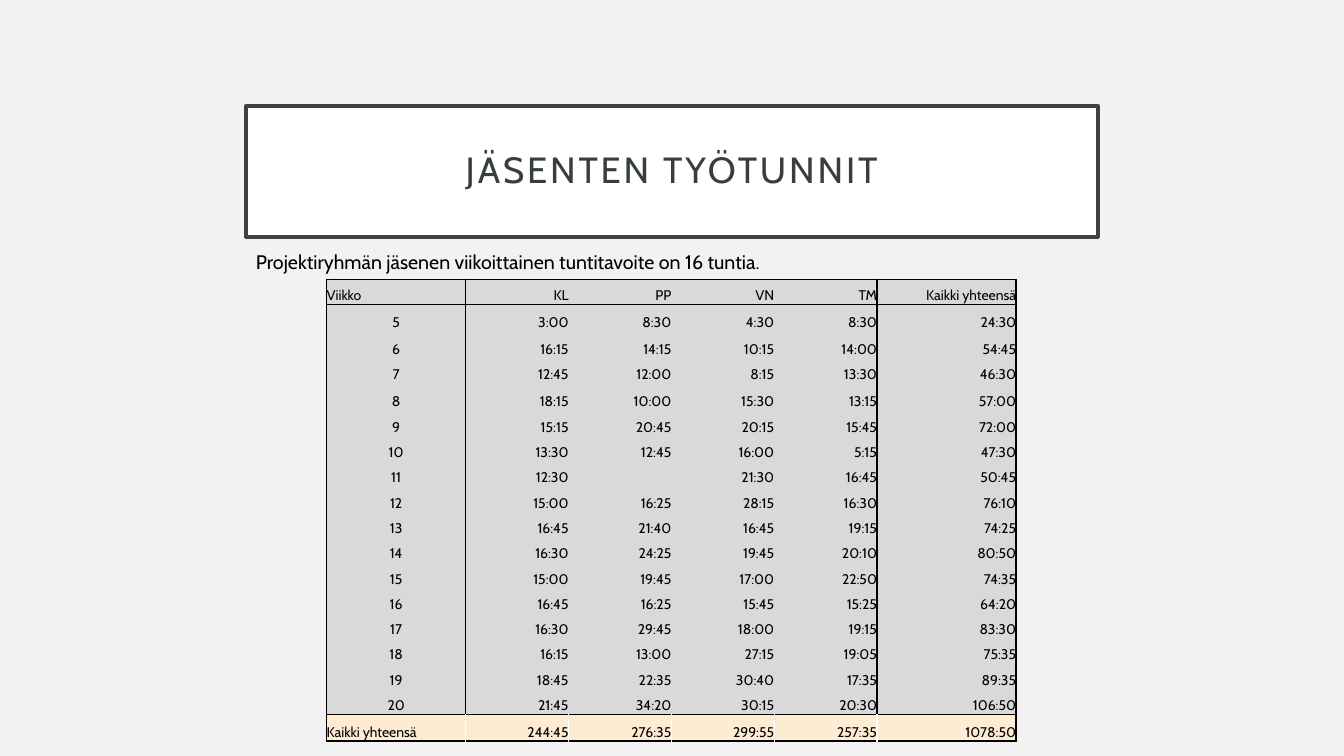
from pptx import Presentation
from pptx.dml.color import RGBColor
from pptx.enum.text import MSO_ANCHOR, MSO_AUTO_SIZE, PP_ALIGN
from pptx.oxml.xmlchemy import OxmlElement
from pptx.util import Inches, Pt

SLIDE_WIDTH, SLIDE_HEIGHT = Inches(13.33), Inches(7.5)
FONT = "Cabin"
BLACK, WHITE, GREY, CREAM = "000000", "FFFFFF", "D9D9D9", "FDECD2"

# Column widths and row heights in hundredths of the slide
COLUMN_WIDTHS = [10.35] + [7.65] * 4 + [10.35]
ROW_HEIGHT, TALL_ROW_HEIGHT = 3.35, 3.55
TALL_ROWS = {1, 2, 4, 17}

HOURS = [
    ["Viikko", "KL", "PP", "VN", "TM", "Kaikki yhteensä"],
    ["5", "3:00", "8:30", "4:30", "8:30", "24:30"],
    ["6", "16:15", "14:15", "10:15", "14:00", "54:45"],
    ["7", "12:45", "12:00", "8:15", "13:30", "46:30"],
    ["8", "18:15", "10:00", "15:30", "13:15", "57:00"],
    ["9", "15:15", "20:45", "20:15", "15:45", "72:00"],
    ["10", "13:30", "12:45", "16:00", "5:15", "47:30"],
    ["11", "12:30", "", "21:30", "16:45", "50:45"],
    ["12", "15:00", "16:25", "28:15", "16:30", "76:10"],
    ["13", "16:45", "21:40", "16:45", "19:15", "74:25"],
    ["14", "16:30", "24:25", "19:45", "20:10", "80:50"],
    ["15", "15:00", "19:45", "17:00", "22:50", "74:35"],
    ["16", "16:45", "16:25", "15:45", "15:25", "64:20"],
    ["17", "16:30", "29:45", "18:00", "19:15", "83:30"],
    ["18", "16:15", "13:00", "27:15", "19:05", "75:35"],
    ["19", "18:45", "22:35", "30:40", "17:35", "89:35"],
    ["20", "21:45", "34:20", "30:15", "20:30", "106:50"],
    ["Kaikki yhteensä", "244:45", "276:35", "299:55", "257:35", "1078:50"],
]


def across(columns):
    return round(SLIDE_WIDTH * columns / 100)


def down(rows):
    return round(SLIDE_HEIGHT * rows / 100)


def color(hex_string):
    return RGBColor.from_string(hex_string)


def paint(fill, hex_string):
    fill.solid()
    fill.fore_color.rgb = color(hex_string)


def write(frame, text, size, hex_string=BLACK, align=PP_ALIGN.LEFT,
          anchor=MSO_ANCHOR.TOP, line_spacing=None, tracking=None):
    frame.vertical_anchor = anchor
    paragraph = frame.paragraphs[0]
    paragraph.alignment = align
    paragraph.line_spacing = line_spacing
    if not text:
        # An empty cell keeps the small text size, so its row does not grow
        end = OxmlElement("a:endParaRPr")
        end.set("sz", str(size * 100))
        paragraph._p.append(end)
        return
    run = paragraph.add_run()
    run.text = text
    run.font.name = FONT
    run.font.size = Pt(size)
    run.font.color.rgb = color(hex_string)
    if tracking:
        run.font._element.set("spc", str(tracking * 100))


def add_title(slide, text):
    title = slide.shapes.title
    title.left, title.top = across(18.3), down(14)
    title.width, title.height = across(63.4), down(17.33)
    paint(title.fill, WHITE)
    title.line.color.rgb = color("404040")
    title.line.width = Pt(2.5)
    frame = title.text_frame
    frame.auto_size = MSO_AUTO_SIZE.NONE
    frame.margin_left = frame.margin_right = Inches(0.2)
    frame.margin_top = frame.margin_bottom = Inches(0.2)
    write(frame, text, 26, "383E40", align=PP_ALIGN.CENTER,
          anchor=MSO_ANCHOR.MIDDLE, line_spacing=0.9, tracking=2)


def add_goal(slide, text):
    goal = slide.shapes.add_textbox(across(18.3), down(32.4), across(56.94), down(4.53))
    goal.text_frame.word_wrap = True
    write(goal.text_frame, text, 14)


def set_border(cell, side, hex_string):
    border = OxmlElement(f"a:ln{side}")
    border.set("w", str(Pt(1)))
    if hex_string:
        stroke = OxmlElement("a:solidFill")
        shade = OxmlElement("a:srgbClr")
        shade.set("val", hex_string)
        stroke.append(shade)
    else:
        stroke = OxmlElement("a:noFill")
    border.append(stroke)
    cell._tc.get_or_add_tcPr().append(border)


def border_colors(row, column):
    total, last = len(HOURS) - 1, len(COLUMN_WIDTHS) - 1
    # Vertical rules frame the week and sum columns; the total row has white ones
    inner = WHITE if row == total else None
    ruled = {0, last + 1} if row == total else {0, 1, last, last + 1}
    return {
        "L": BLACK if column in ruled else inner,
        "R": BLACK if column + 1 in ruled else inner,
        "T": BLACK if row in (0, 1, total) else None,
        "B": BLACK if row in (0, total - 1, total) else None,
    }


def cell_align(row, column):
    if column:
        return PP_ALIGN.RIGHT
    return PP_ALIGN.LEFT if row in (0, len(HOURS) - 1) else PP_ALIGN.CENTER


def add_hours_table(slide):
    heights = [TALL_ROW_HEIGHT if row in TALL_ROWS else ROW_HEIGHT
               for row in range(len(HOURS))]
    table = slide.shapes.add_table(
        len(HOURS), len(COLUMN_WIDTHS), across(24.3), down(36.93),
        across(sum(COLUMN_WIDTHS)), down(sum(heights))).table
    table.first_row = table.horz_banding = False
    for column, width in zip(table.columns, COLUMN_WIDTHS):
        column.width = across(width)
    for row, height in zip(table.rows, heights):
        row.height = down(height)
    for row, entries in enumerate(HOURS):
        for column, entry in enumerate(entries):
            cell = table.cell(row, column)
            cell.margin_left = cell.margin_right = 0
            cell.margin_top = cell.margin_bottom = 0
            cell.vertical_anchor = MSO_ANCHOR.BOTTOM
            for side, hex_string in border_colors(row, column).items():
                set_border(cell, side, hex_string)
            paint(cell.fill, CREAM if row == len(HOURS) - 1 else GREY)
            write(cell.text_frame, entry, 10, align=cell_align(row, column), anchor=None)


def main():
    deck = Presentation()
    deck.slide_width, deck.slide_height = SLIDE_WIDTH, SLIDE_HEIGHT
    slide = deck.slides.add_slide(deck.slide_layouts[5])
    paint(slide.background.fill, "F2F2F2")

    # Heading, weekly goal and hours per member
    add_title(slide, "JÄSENTEN TYÖTUNNIT")
    add_goal(slide, "Projektiryhmän jäsenen viikoittainen tuntitavoite on 16 tuntia.")
    add_hours_table(slide)
    deck.save("out.pptx")


if __name__ == "__main__":
    main()
